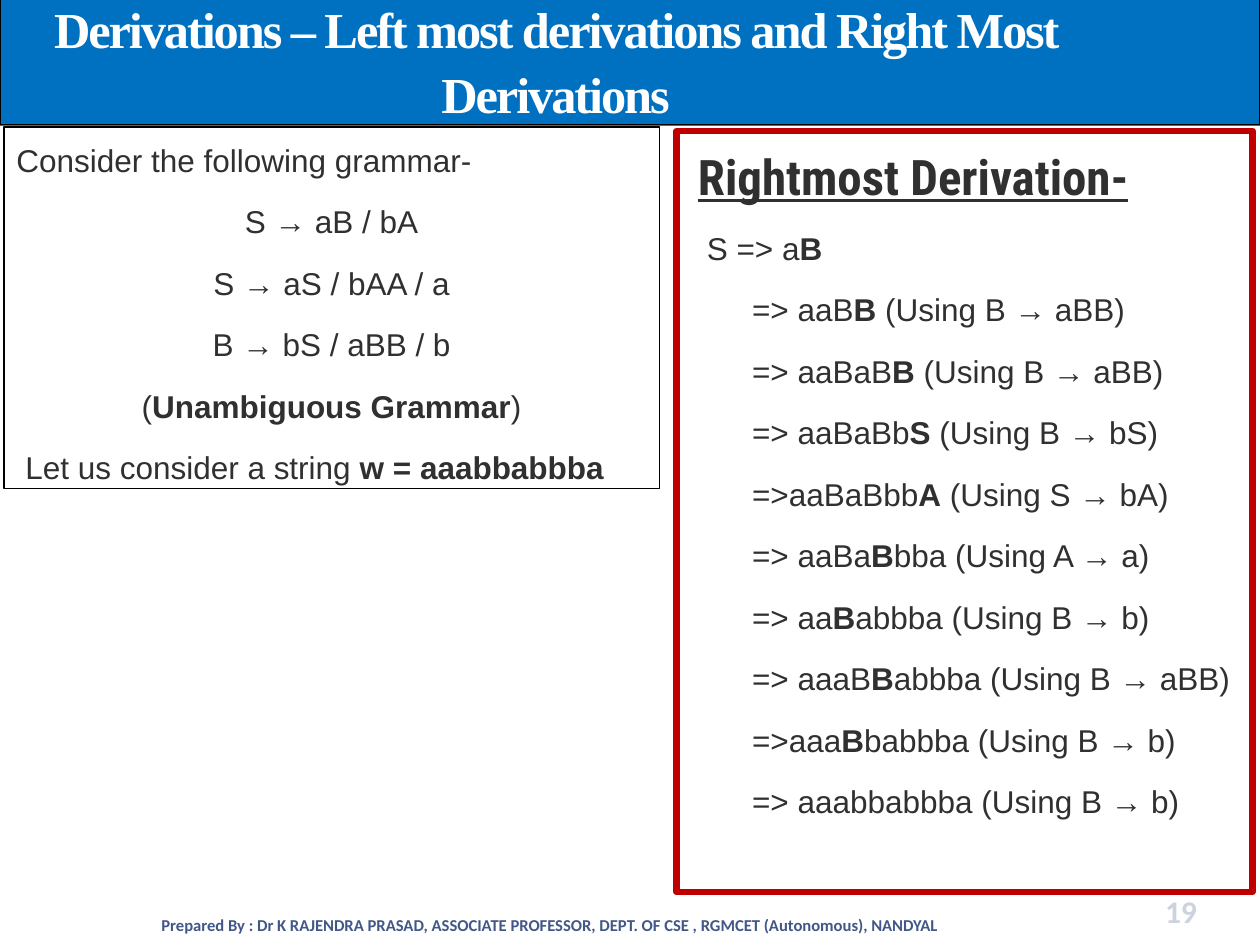
from pptx import Presentation
from pptx.dml.color import RGBColor
from pptx.enum.shapes import MSO_SHAPE
from pptx.enum.text import MSO_ANCHOR, MSO_AUTO_SIZE, PP_ALIGN
from pptx.oxml.ns import qn
from pptx.util import Cm, Pt
from lxml.etree import SubElement

NAVY, INK = "002060", "303030"
ARROW_FONT_SIZE = 18

GRAMMAR = ["S → aB / bA", "S → aS / bAA / a", "B → bS / aBB / b",
           "(**Unambiguous Grammar**)"]
# Sentential forms; the variable expanded next stands between ** marks
DERIVATION = [
    "=> aaB**B** (Using B → aBB)",
    "=> aaBaB**B** (Using B → aBB)",
    "=> aaBaBb**S** (Using B → bS)",
    "=>aaBaBbb**A** (Using S → bA)",
    "=> aaBa**B**bba (Using A → a)",
    "=> aa**B**abbba (Using B → b)",
    "=> aaaB**B**abbba (Using B → aBB)",
    "=>aaa**B**babbba (Using B → b)",
    "=> aaabbabbba (Using B → b)",
]


def color(value):
    return RGBColor.from_string(value)


def place(shape, left, top, width, height):
    shape.left, shape.top = Cm(left), Cm(top)
    shape.width, shape.height = Cm(width), Cm(height)


def add_text(frame, text, first=False, size=ARROW_FONT_SIZE, font="Arial", fill=INK,
             bold=False, underline=False, align=PP_ALIGN.LEFT, indent=0, line=1.07,
             before=3, after=9, tracking=None, alpha=None):
    """Add one paragraph; words between ** marks are bold."""
    paragraph = frame.paragraphs[0] if first else frame.add_paragraph()
    properties = paragraph._p.get_or_add_pPr()
    properties.set("marL", str(Cm(indent)))
    properties.set("indent", "0")
    paragraph.alignment = align
    paragraph.line_spacing = line
    paragraph.space_before = Pt(0 if first else before)
    paragraph.space_after = Pt(after)
    SubElement(properties, qn("a:buNone"))
    for index, part in enumerate(text.split("**")):
        if not part:
            continue
        run = paragraph.add_run()
        run.text = part
        run.font.size, run.font.name = Pt(size), font
        run.font.bold = bold or index % 2 == 1
        run.font.underline = underline
        run.font.color.rgb = color(fill)
        if tracking:
            run._r.get_or_add_rPr().set("spc", str(tracking))
        if alpha:
            tint = run._r.find(".//" + qn("a:srgbClr"))
            SubElement(tint, qn("a:alpha")).set("val", str(alpha * 1000))


def set_frame(shape, anchor, top=0.13):
    frame = shape.text_frame
    frame.word_wrap = True
    frame.auto_size = MSO_AUTO_SIZE.NONE
    frame.vertical_anchor = anchor
    frame.margin_left = frame.margin_right = Cm(0.25)
    frame.margin_top, frame.margin_bottom = Cm(top), Cm(0.13)
    return frame


def add_bar(slide, left, top, width, height, fill, outline=None):
    bar = slide.shapes.add_shape(MSO_SHAPE.RECTANGLE, Cm(left), Cm(top),
                                 Cm(width), Cm(height))
    bar.shadow.inherit = False
    bar.fill.solid()
    bar.fill.fore_color.rgb = color(fill)
    if outline:
        bar.line.color.rgb = color(outline)
        bar.line.width = Pt(1)
    else:
        bar.line.fill.background()
    # Bars lie behind the placeholders
    slide.shapes._spTree.insert(2, bar._element)


def build_header(slide, left, top, width, height):
    add_bar(slide, left, top - 0.03, width, height, "0070C0", outline="000000")
    add_bar(slide, left, top, width, height, "2F71A2")
    title = slide.shapes.title
    place(title, left + 0.25, top + 0.23, width - 3.5, height - 0.64)
    add_text(set_frame(title, MSO_ANCHOR.MIDDLE),
             "Derivations – Left most derivations and Right Most Derivations",
             first=True, size=28.8, font="Times New Roman", fill="FFFFFF", bold=True,
             align=PP_ALIGN.CENTER, after=8, tracking=-120)


def build_panel(body, left, top, width, height, outline, weight):
    place(body, left, top, width, height)
    body.line.color.rgb = color(outline)
    body.line.width = Pt(weight)
    return set_frame(body, MSO_ANCHOR.TOP, top=0.23)


def build_grammar(body, *box):
    frame = build_panel(body, *box, outline="000000", weight=0.75)
    add_text(frame, "Consider the following grammar-", first=True)
    for rule in GRAMMAR:
        add_text(frame, rule, align=PP_ALIGN.CENTER)
    add_text(frame, "Let us consider a string **w = aaabbabbba**", indent=0.18)


def build_derivation(body, *box):
    frame = build_panel(body, *box, outline="C00000", weight=3.75)
    add_text(frame, "Rightmost Derivation-", first=True, size=28,
             font="Roboto Condensed", bold=True, underline=True, indent=0.18)
    add_text(frame, "S => a**B**", indent=0.36)
    for step in DERIVATION:
        add_text(frame, step, indent=1.27)


def build_footer(slide, left, top, width, height):
    notes = [
        (left, width - 2.46, "Prepared By : Dr K RAJENDRA PRASAD, ASSOCIATE PROFESSOR, "
         "DEPT. OF CSE , RGMCET (Autonomous), NANDYAL",
         9.5, PP_ALIGN.CENTER, MSO_ANCHOR.MIDDLE, 75),
        (left + width - 6.1, 6.1, "19", 18, PP_ALIGN.RIGHT, MSO_ANCHOR.BOTTOM, 20),
    ]
    for note_left, note_width, text, size, align, anchor, alpha in notes:
        box = slide.shapes.add_textbox(Cm(note_left), Cm(top), Cm(note_width), Cm(height))
        add_text(set_frame(box, anchor), text, first=True, size=size, font="Calibri",
                 fill=NAVY, bold=True, align=align, line=1.0, after=0, alpha=alpha)


def main():
    presentation = Presentation()
    presentation.slide_width, presentation.slide_height = Cm(25.4), Cm(19.05)
    # "Two Content" layout: a title and two bodies
    slide = presentation.slides.add_slide(presentation.slide_layouts[3])
    build_header(slide, 0, 0, 25.4, 2.54)
    build_grammar(slide.placeholders[1], 0.08, 2.56, 13.21, 7.29)
    build_derivation(slide.placeholders[2], 13.64, 2.64, 11.61, 15.34)
    build_footer(slide, 0.25, 18.42, 24.13, 0.45)
    presentation.save("out.pptx")


if __name__ == "__main__":
    main()
